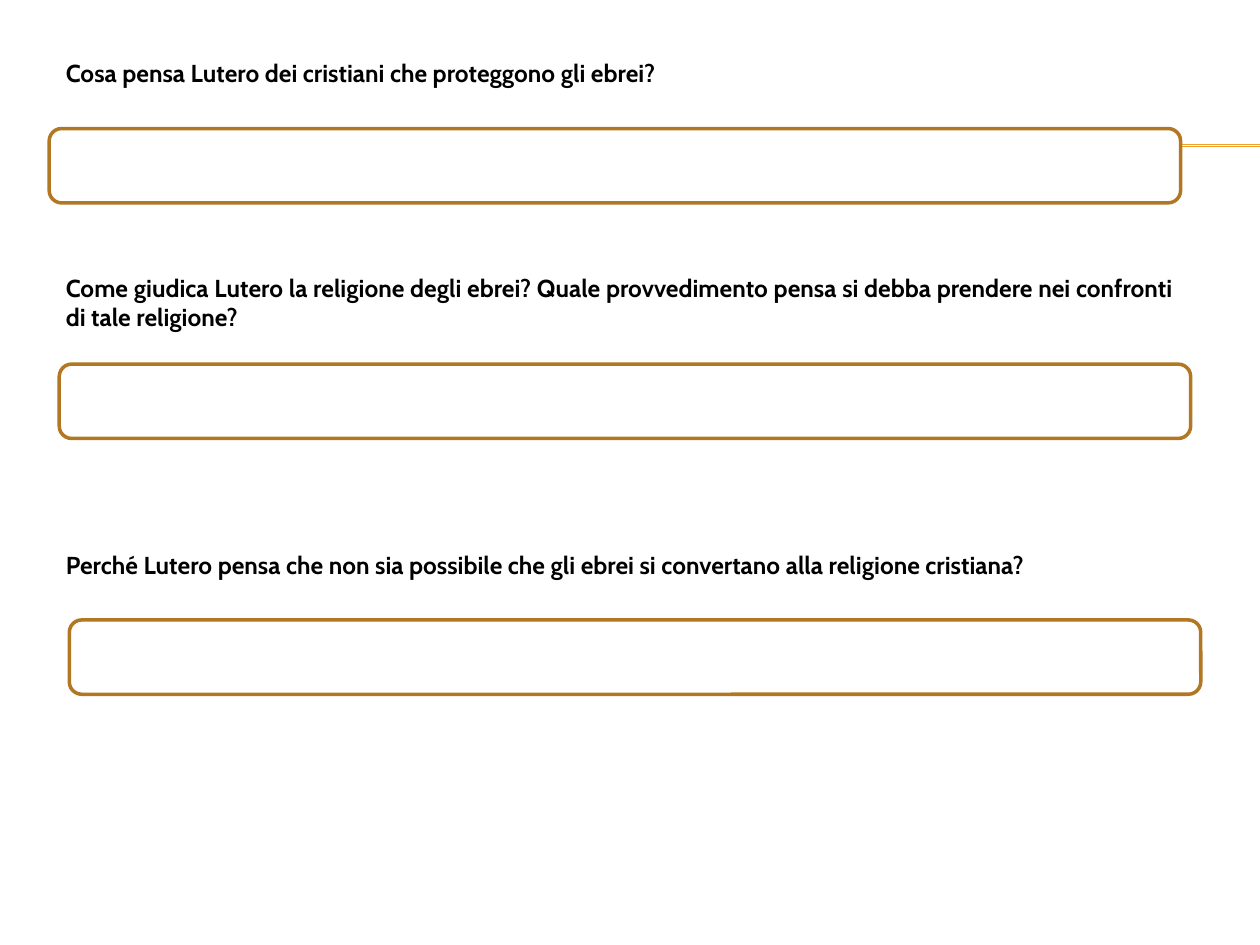
from dataclasses import dataclass

from lxml.etree import SubElement
from pptx import Presentation
from pptx.dml.color import RGBColor as Rgb
from pptx.enum.shapes import MSO_CONNECTOR as Link, MSO_SHAPE as Shape
from pptx.enum.text import MSO_ANCHOR as Anchor, PP_ALIGN as Align
from pptx.oxml.ns import qn
from pptx.util import Inches, Pt


@dataclass(frozen=True)
class Theme:
    font: str = "Cabin"
    size: float = 14
    ink: str = "000000"
    paper: str = "FFFFFF"
    frame: str = "B17722"
    rule: str = "F0A22E"
    thick: float = 2
    thin: float = 0.75


class Sheet:
    """Draws the parts of a question sheet, with lengths in percent of the slide."""

    def __init__(self, deck, theme):
        self.deck, self.theme = deck, theme
        self.slide = deck.slides.add_slide(deck.slide_layouts[6])

    def place(self, x, y):
        return int(self.deck.slide_width * x / 100), int(self.deck.slide_height * y / 100)

    def rule(self, left, right, y):
        line = self.slide.shapes.add_connector(
            Link.STRAIGHT, *self.place(left, y), *self.place(right, y))
        line.line.color.rgb = Rgb.from_string(self.theme.rule)
        line.line.width = Pt(self.theme.thin)
        SubElement(line._element.spPr, qn("a:effectLst"))

    def panel(self, x, y, wide, high):
        box = self.slide.shapes.add_shape(
            Shape.ROUNDED_RECTANGLE, *self.place(x, y), *self.place(wide, high))
        box.adjustments[0] = 0.167
        box.shadow.inherit = False
        return box

    def answer(self, x, y, wide, high):
        box = self.panel(x, y, wide, high)
        box.fill.solid()
        box.fill.fore_color.rgb = Rgb.from_string(self.theme.paper)
        box.line.color.rgb = Rgb.from_string(self.theme.frame)
        box.line.width = Pt(self.theme.thick)

    def ask(self, text, x, y, wide, high):
        box = self.panel(x, y, wide, high)
        box.fill.background()
        box.line.fill.background()
        frame = box.text_frame
        frame.word_wrap = True
        frame.vertical_anchor = Anchor.MIDDLE
        para = frame.paragraphs[0]
        para.alignment = Align.JUSTIFY
        run = para.add_run()
        run.text = text
        run.font.name = self.theme.font
        run.font.size = Pt(self.theme.size)
        run.font.bold = True
        run.font.color.rgb = Rgb.from_string(self.theme.ink)


def main():
    deck = Presentation()
    deck.slide_width, deck.slide_height = Inches(10), Inches(7.5)
    sheet = Sheet(deck, Theme())
    for y in (15.33, 15.47):
        sheet.rule(5.6, 100, y)

    left, step = 3.9, 0.8
    items = (
        ("Cosa pensa Lutero dei cristiani che proteggono gli ebrei?", 3.07, 13.6),
        ("Come giudica Lutero la religione degli ebrei? Quale provvedimento pensa "
         "si debba prendere nei confronti di tale religione?", 27.33, 38.53),
        ("Perché Lutero pensa che non sia possibile che gli ebrei si convertano "
         "alla religione cristiana?", 55.07, 65.6),
    )
    for i, (text, top, below) in enumerate(items):
        sheet.answer(left + i * step, below, 89.8, 7.87)
        sheet.ask(text, left, top, 90.6, 9.33)
    deck.save("out.pptx")


if __name__ == "__main__":
    main()
